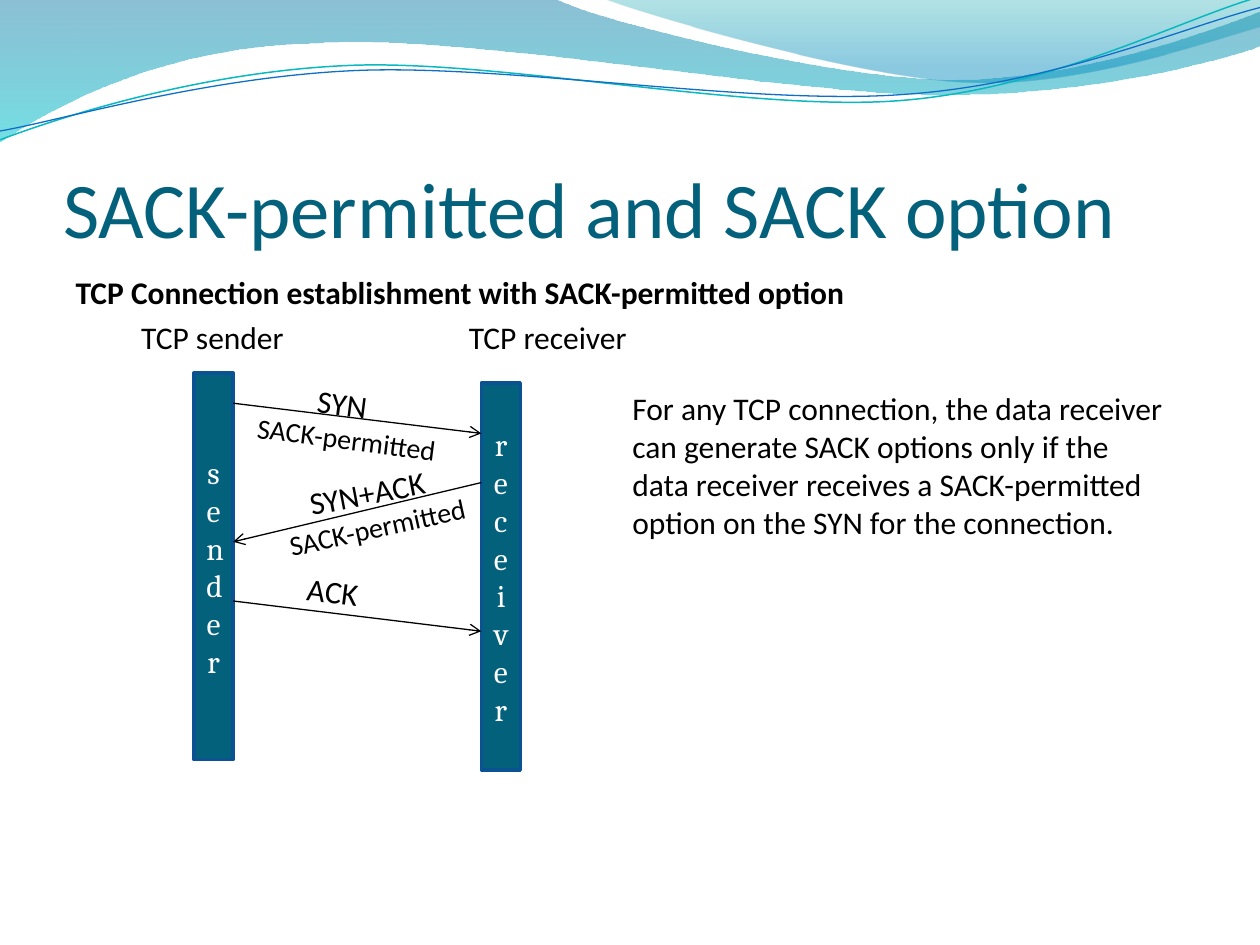
from lxml.etree import SubElement
from pptx import Presentation
from pptx.dml.color import RGBColor
from pptx.enum.shapes import MSO_CONNECTOR as Conn, MSO_SHAPE as Shape
from pptx.enum.text import MSO_ANCHOR as Anchor, MSO_AUTO_SIZE as Fit, PP_ALIGN as Align
from pptx.oxml.ns import qn
from pptx.util import Inches, Pt

HEX = {"teal": "04617B", "edge": "0B5292", "ink": "000000", "white": "FFFFFF",
       "aqua": "0AB8BF", "blue": "0F6FC6"}

TITLE = "SACK-permitted and SACK option"
# Each body line: text, bold, space before
BODY = [("TCP Connection establishment with SACK-permitted option", True, 0),
        ("\tTCP sender\t\t\tTCP receiver", False, 3.6)]
TAB = Inches(0.52)
NOTE = ("For any TCP connection, the data receiver can generate SACK options only if "
        "the data receiver receives a SACK-permitted option on the SYN for the connection.")

BAR_W, BAR_H = 0.31, 3.07
BARS = [("sender", 1.54, 2.96), ("receiver", 3.82, 3.04)]
LEFT, RIGHT = BARS[0][1] + BAR_W, BARS[1][1]
# Each message: start x, start y, end x, end y
ARROWS = [(LEFT, 3.2, RIGHT, 3.44), (RIGHT, 3.83, LEFT, 4.3), (LEFT, 4.77, RIGHT, 5.01)]
# Each label: text, box, size, rotation
LABELS = [
    ("SYN", (2.42, 3.02, 0.87, 0.4), 18, 7.3),
    ("SACK-permitted", (1.94, 3.32, 1.98, 0.37), 16, 7.3),
    ("SACK-permitted", (2.18, 3.96, 1.98, 0.37), 16, 347.6),
    ("SYN+ACK", (2.35, 3.7, 1.21, 0.4), 18, 349.1),
    ("ACK", (2.34, 4.51, 0.87, 0.4), 18, 7.3),
    (NOTE, (4.92, 3.04, 4.41, 1.62), 18, 0),
]

# A pair is a corner; six numbers are a Bezier curve's two controls and end.
# Each gradient stop: position, colour, opacity in percent
WAVES = [
    ([(0, 0), (4.4, -0.01), (4.76, 0.17, 6.64, 0.63, 7.58, 0.63),
      (8.53, 0.63, 9.58, 0.26, 10, 0.09), (10.01, 0.36),
      (9.83, 0.44, 8.7, 0.76, 7.46, 0.75), (6.22, 0.75, 3.82, 0.28, 2.57, 0.34),
      (1.29, 0.36, 0.46, 0.83, -0.01, 1.13)],
     [(0, "0074A1", 45), (1, "00C6CF", 55)]),
    ([(4.79, -0.01), (5.09, 0.11, 6.82, 0.62, 7.69, 0.65),
      (8.56, 0.69, 9.61, 0.32, 10, 0.21), (10, 0)],
     [(0, "00A1A9", 30), (0.8, "008BBF", 45)]),
]
STRANDS = [
    ([(0, 1.11), (0.48, 0.93, 1.58, 0.57, 2.77, 0.52),
      (3.95, 0.47, 5.93, 0.89, 7.13, 0.8), (8.33, 0.71, 9.38, 0.15, 9.98, -0.02)],
     "aqua", 0.85),
    ([(0, 1.04), (0.47, 0.96, 1.64, 0.61, 2.83, 0.56),
      (4.03, 0.51, 5.97, 0.84, 7.17, 0.75), (8.36, 0.67, 9.41, 0.21, 10, 0.06)],
     "blue", 0.75),
]


def rgb(name):
    return RGBColor.from_string(HEX.get(name, name))


def place(shape, box):
    shape.left, shape.top, shape.width, shape.height = map(Inches, box)


def write(para, text, size=18, font="Calibri", color="ink", bold=False, align=Align.LEFT):
    para.alignment = align
    run = para.add_run()
    run.text = text
    run.font.size, run.font.name, run.font.bold = Pt(size), font, bold
    run.font.color.rgb = rgb(color)


def outline(slide, path, close):
    """Draw a freeform through the path's ends, then bend its curved parts."""
    ends = [tuple(map(Inches, part[-2:])) for part in path]
    pen = slide.shapes.build_freeform(*ends[0])
    pen.add_line_segments(ends[1:], close=close)
    shape = pen.convert_to_shape()
    shape.shadow.inherit = False
    sides = list(shape.element.iter(qn("a:lnTo")))
    for side, part in zip(sides, path[1:]):
        if len(part) == 6:
            side.clear()
            side.tag = qn("a:cubicBezTo")
            for x, y in zip(part[::2], part[1::2]):
                SubElement(side, qn("a:pt"), x=str(Inches(x) - shape.left),
                           y=str(Inches(y) - shape.top))
    return shape


def draw_waves(slide):
    for path, stops in WAVES:
        wave = outline(slide, path, True)
        wave.line.fill.background()
        wave.fill.gradient()
        wave.fill.gradient_angle = 270
        for stop, (pos, color, _) in zip(wave.fill.gradient_stops, stops):
            stop.position, stop.color.rgb = pos, rgb(color)
        tints = list(wave.element.spPr.iter(qn("a:srgbClr")))
        for tint, (_, _, alpha) in zip(tints, stops):
            SubElement(tint, qn("a:alpha"), val=str(alpha * 1000))
    for path, color, width in STRANDS:
        strand = outline(slide, path, False)
        strand.fill.background()
        strand.line.color.rgb, strand.line.width = rgb(color), Pt(width)


def fill_text(slide):
    title, body = slide.placeholders
    place(title, (0.5, 0.77, 9, 1.25))
    frame = title.text_frame
    frame.auto_size, frame.vertical_anchor = Fit.NONE, Anchor.BOTTOM
    frame.margin_left = frame.margin_right = frame.margin_bottom = 0
    write(frame.paragraphs[0], TITLE, size=45, color="teal")

    place(body, (0.5, 2.12, 9, 4.8))
    frame = body.text_frame
    frame.auto_size = Fit.NONE
    for i, (text, bold, gap) in enumerate(BODY):
        para = frame.add_paragraph() if i else frame.paragraphs[0]
        props = para._p.get_or_add_pPr()
        for key, value in (("marL", 0), ("indent", 0), ("defTabSz", int(TAB))):
            props.set(key, str(value))
        SubElement(props, qn("a:buNone"))
        para.space_before = Pt(gap)
        write(para, text, bold=bold)


def draw_exchange(slide):
    for name, x, y in BARS:
        bar = slide.shapes.add_shape(Shape.RECTANGLE, *map(Inches, (x, y, BAR_W, BAR_H)))
        bar.shadow.inherit = False
        bar.fill.solid()
        bar.fill.fore_color.rgb = rgb("teal")
        bar.line.color.rgb, bar.line.width = rgb("edge"), Pt(2)
        frame = bar.text_frame
        frame.word_wrap, frame.vertical_anchor = True, Anchor.MIDDLE
        write(frame.paragraphs[0], name, font="Cambria", color="white", align=Align.CENTER)
    for ends in ARROWS:
        arrow = slide.shapes.add_connector(Conn.STRAIGHT, *map(Inches, ends))
        arrow.line.color.rgb, arrow.line.width = rgb("ink"), Pt(0.75)
        SubElement(arrow.line._get_or_add_ln(), qn("a:tailEnd"), type="arrow")
        SubElement(arrow.element.spPr, qn("a:effectLst"))
    for text, box, size, turn in LABELS:
        label = slide.shapes.add_textbox(*map(Inches, box))
        label.rotation = turn
        label.text_frame.word_wrap = True
        write(label.text_frame.paragraphs[0], text, size=size)


def main():
    deck = Presentation()
    deck.slide_width, deck.slide_height = Inches(10), Inches(7.5)
    slide = deck.slides.add_slide(deck.slide_layouts[1])
    draw_waves(slide)
    fill_text(slide)
    draw_exchange(slide)
    deck.save("out.pptx")


if __name__ == "__main__":
    main()
